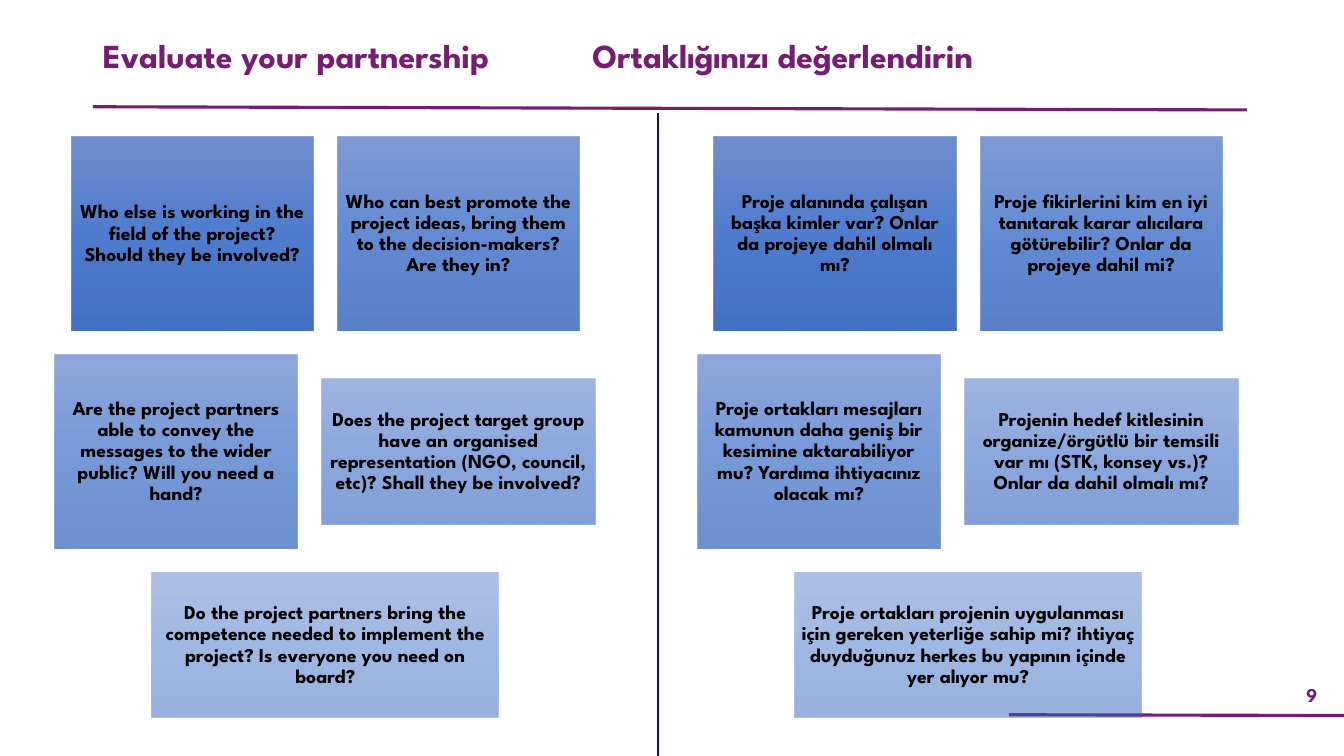
from dataclasses import dataclass

import pptx
import pptx.dml.color
import pptx.enum.shapes
import pptx.enum.text
import pptx.oxml.ns
import pptx.shapes.autoshape
import pptx.slide
import pptx.text.text
import pptx.util
from lxml import etree
from pptx.util import Cm

COLOURS = {
    "purple": "751D70",
    "navy": "07144A".replace("4A", "7A"),
    "black": "000000",
    "card top": "6183CB",
    "card middle": "3E70CA",
    "card bottom": "3062BB",
}
FONT = "League Spartan"
CARD_GAP = 0.61
CARDS_TOP = 3.45


@dataclass(frozen=True)
class Rule:
    start: tuple[float, float]
    end: tuple[float, float]
    colour: str
    width: float


@dataclass(frozen=True)
class Card:
    width: float
    height: float
    opacity: int


@dataclass(frozen=True)
class Panel:
    centre: float
    questions: tuple[str, ...]


MASTER_RULES = (
    Rule((2.34, 2.69), (31.42, 2.77), "purple", 2.25),
    Rule((25.43, 18.01), (33.87, 18.03), "purple", 2.25),
)
DIVIDER = Rule((16.59, 19.05), (16.59, 2.84), "navy", 1.5)

CARD_ROWS = (
    (Card(6.1, 4.88, 90), Card(6.1, 4.88, 80)),
    (Card(6.1, 4.88, 70), Card(6.91, 3.66, 60)),
    (Card(8.74, 3.66, 50),),
)

PANELS = (
    Panel(8.2, (
        "Who else is working in the field of the project? Should they be involved?",
        "Who can best promote the project ideas, bring them to the decision-makers? Are they in?",
        "Are the project partners able to convey the messages to the wider public? Will you need a hand?",
        "Does the project target group have an organised representation (NGO, council, etc)? "
        "Shall they be involved?",
        "Do the project partners bring the competence needed to implement the project? "
        "Is everyone you need on board?",
    )),
    Panel(24.4, (
        "Proje alanında çalışan başka kimler var? Onlar da projeye dahil olmalı mı?",
        "Proje fikirlerini kim en iyi tanıtarak karar alıcılara götürebilir? Onlar da projeye dahil mi?",
        "Proje ortakları mesajları kamunun daha geniş bir kesimine aktarabiliyor mu? "
        "Yardıma ihtiyacınız olacak mı?",
        "Projenin hedef kitlesinin organize/örgütlü bir temsili var mı (STK, konsey vs.)? "
        "Onlar da dahil olmalı mı?",
        "Proje ortakları projenin uygulanması için gereken yeterliğe sahip mi? "
        "ihtiyaç duyduğunuz herkes bu yapının içinde yer alıyor mu?",
    )),
)


def rgb(name: str) -> pptx.dml.color.RGBColor:
    return pptx.dml.color.RGBColor.from_string(COLOURS[name])


def write_text(frame: pptx.text.text.TextFrame, text: str, size: float, colour: str,
               alignment: pptx.enum.text.PP_ALIGN, anchor: pptx.enum.text.MSO_ANCHOR) -> None:
    frame.word_wrap = True
    frame.auto_size = pptx.enum.text.MSO_AUTO_SIZE.NONE
    frame.vertical_anchor = anchor
    paragraph = frame.paragraphs[0]
    paragraph.alignment = alignment
    paragraph.line_spacing = 0.9
    run = paragraph.add_run()
    run.text = text
    run.font.name = FONT
    run.font.size = pptx.util.Pt(size)
    run.font.bold = True
    run.font.color.rgb = rgb(colour)


def write_heading(frame: pptx.text.text.TextFrame, text: str) -> None:
    write_text(frame, text, 24, "purple", pptx.enum.text.PP_ALIGN.JUSTIFY,
               pptx.enum.text.MSO_ANCHOR.TOP)


def add_rule(slide: pptx.slide.Slide, rule: Rule) -> None:
    connector = slide.shapes.add_connector(
        pptx.enum.shapes.MSO_CONNECTOR.STRAIGHT,
        *(Cm(value) for value in rule.start + rule.end))
    connector.line.color.rgb = rgb(rule.colour)
    connector.line.width = pptx.util.Pt(rule.width)
    etree.SubElement(connector._element.spPr, pptx.oxml.ns.qn("a:effectLst"))


def fill_card(shape: pptx.shapes.autoshape.Shape, opacity: int) -> None:
    """Give the shape a translucent gradient of three stops, running downwards."""
    qn = pptx.oxml.ns.qn
    shape.fill.gradient()
    shape.fill.gradient_angle = 270
    stops = shape._element.spPr.find(".//" + qn("a:gsLst"))
    for stop in list(stops):
        stops.remove(stop)
    for position, name in ((0, "card top"), (50, "card middle"), (100, "card bottom")):
        stop = etree.SubElement(stops, qn("a:gs"), pos=str(position * 1000))
        colour = etree.SubElement(stop, qn("a:srgbClr"), val=COLOURS[name])
        etree.SubElement(colour, qn("a:alpha"), val=str(opacity * 1000))


def add_card(slide: pptx.slide.Slide, card: Card, left: float, top: float, question: str) -> None:
    shape = slide.shapes.add_shape(
        pptx.enum.shapes.MSO_SHAPE.RECTANGLE, Cm(left), Cm(top), Cm(card.width), Cm(card.height))
    shape.shadow.inherit = False
    shape.line.fill.background()
    fill_card(shape, card.opacity)
    frame = shape.text_frame
    frame.margin_left = frame.margin_right = frame.margin_top = frame.margin_bottom = Cm(0.15)
    write_text(frame, question, 14, "black", pptx.enum.text.PP_ALIGN.CENTER,
               pptx.enum.text.MSO_ANCHOR.MIDDLE)


def add_panel(slide: pptx.slide.Slide, panel: Panel) -> None:
    """Centre each row of cards on the panel, and each card on its row."""
    questions = iter(panel.questions)
    top = CARDS_TOP
    for row in CARD_ROWS:
        row_width = sum(card.width for card in row) + CARD_GAP * (len(row) - 1)
        row_height = max(card.height for card in row)
        left = panel.centre - row_width / 2
        for card in row:
            add_card(slide, card, left, top + (row_height - card.height) / 2, next(questions))
            left += card.width + CARD_GAP
        top += row_height + CARD_GAP


def main() -> None:
    presentation = pptx.Presentation()
    presentation.slide_width = Cm(33.87)
    presentation.slide_height = Cm(19.05)
    slide = presentation.slides.add_slide(presentation.slide_layouts.get_by_name("Title Only"))

    for rule in MASTER_RULES:
        add_rule(slide, rule)
    page_number = slide.shapes.add_textbox(Cm(32.26), Cm(17.09), Cm(1.6), Cm(0.91))
    write_text(page_number.text_frame, "9", 14, "purple", pptx.enum.text.PP_ALIGN.CENTER,
               pptx.enum.text.MSO_ANCHOR.MIDDLE)

    title = slide.shapes.title
    title.left, title.top, title.width, title.height = Cm(2.34), Cm(0.86), Cm(24.71), Cm(1.65)
    write_heading(title.text_frame, "Evaluate your partnership")

    for panel in PANELS:
        add_panel(slide, panel)

    turkish_title = slide.shapes.add_textbox(Cm(14.68), Cm(0.86), Cm(11.4), Cm(1.35))
    write_heading(turkish_title.text_frame, "Ortaklığınızı değerlendirin")
    add_rule(slide, DIVIDER)

    presentation.save("out.pptx")


if __name__ == "__main__":
    main()
